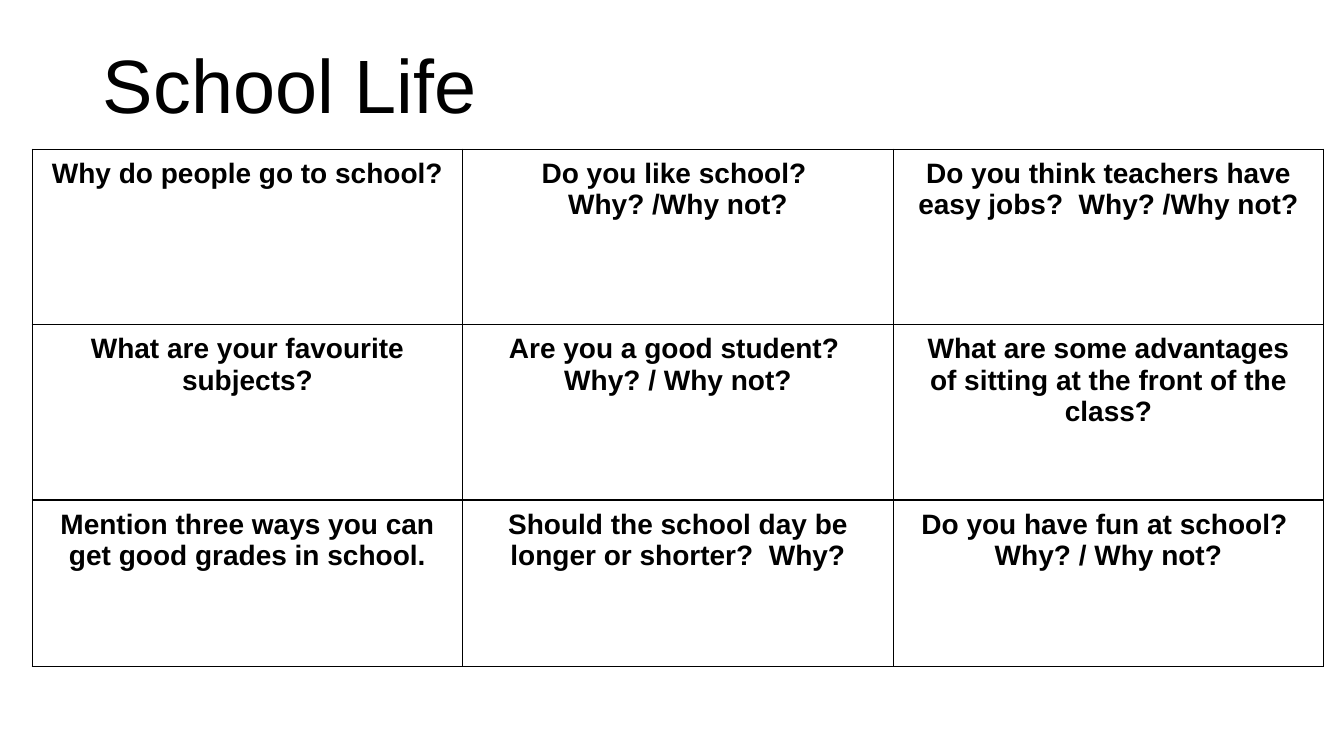
"""Build the School Life slide: a title above a grid of discussion questions."""
from lxml import etree
from pptx import Presentation
from pptx.dml.color import RGBColor
from pptx.enum import text
from pptx.oxml import ns
from pptx.util import Inches, Pt

BLACK = RGBColor(0x00, 0x00, 0x00)
WHITE = RGBColor(0xFF, 0xFF, 0xFF)
FONT = "Arial"
ROW_HEIGHTS = [1.74, 1.74, 1.65]
QUESTIONS = [
    ["Why do people go to school?",
     "Do you like school?  Why? /Why not?",
     "Do you think teachers have easy jobs?  Why? /Why not?"],
    ["What are your favourite subjects?",
     "Are you a good student?  Why? / Why not?",
     "What are some advantages of sitting at the front of the class?"],
    ["Mention three ways you can get good grades in school.",
     "Should the school day be longer or shorter?  Why?",
     "Do you have fun at school?  Why? / Why not?"],
]


def style_font(font, size, bold):
    font.name = FONT
    font.size = Pt(size)
    font.bold = bold
    font.color.rgb = BLACK


def add_borders(cell):
    properties = cell._tc.get_or_add_tcPr()
    for index, side in enumerate(["lnL", "lnR", "lnT", "lnB"]):
        line = etree.Element(ns.qn(f"a:{side}"), w=str(Pt(1)))
        fill = etree.SubElement(line, ns.qn("a:solidFill"))
        etree.SubElement(fill, ns.qn("a:srgbClr"), val=str(BLACK))
        properties.insert(index, line)


presentation = Presentation()
presentation.slide_width = Inches(13.33)
presentation.slide_height = Inches(7.5)
slide = presentation.slides.add_slide(presentation.slide_layouts[5])

title = slide.shapes.title
title.left, title.top = Inches(0.92), Inches(0.32)
title.width, title.height = Inches(5.2), Inches(1.02)
title.text_frame.text = "School Life"
title.text_frame.auto_size = text.MSO_AUTO_SIZE.NONE
title.text_frame.vertical_anchor = text.MSO_ANCHOR.BOTTOM
heading = title.text_frame.paragraphs[0]
heading.alignment = text.PP_ALIGN.LEFT
heading.line_spacing = 0.9
style_font(heading.runs[0].font, 54, False)

table = slide.shapes.add_table(
    len(QUESTIONS), len(QUESTIONS[0]),
    Inches(0.32), Inches(1.48), Inches(12.82), Inches(sum(ROW_HEIGHTS))).table
table.first_row = False
table.horz_banding = False
for column in table.columns:
    column.width = Inches(4.27)

for row, height, questions in zip(table.rows, ROW_HEIGHTS, QUESTIONS):
    row.height = Inches(height)
    for cell, question in zip(row.cells, questions):
        cell.margin_left = cell.margin_right = Inches(0.18)
        cell.margin_top = cell.margin_bottom = Inches(0.09)
        cell.fill.solid()
        cell.fill.fore_color.rgb = WHITE
        add_borders(cell)
        cell.text_frame.text = question
        paragraph = cell.text_frame.paragraphs[0]
        paragraph.alignment = text.PP_ALIGN.CENTER
        style_font(paragraph.runs[0].font, 20, True)

presentation.save("out.pptx")
